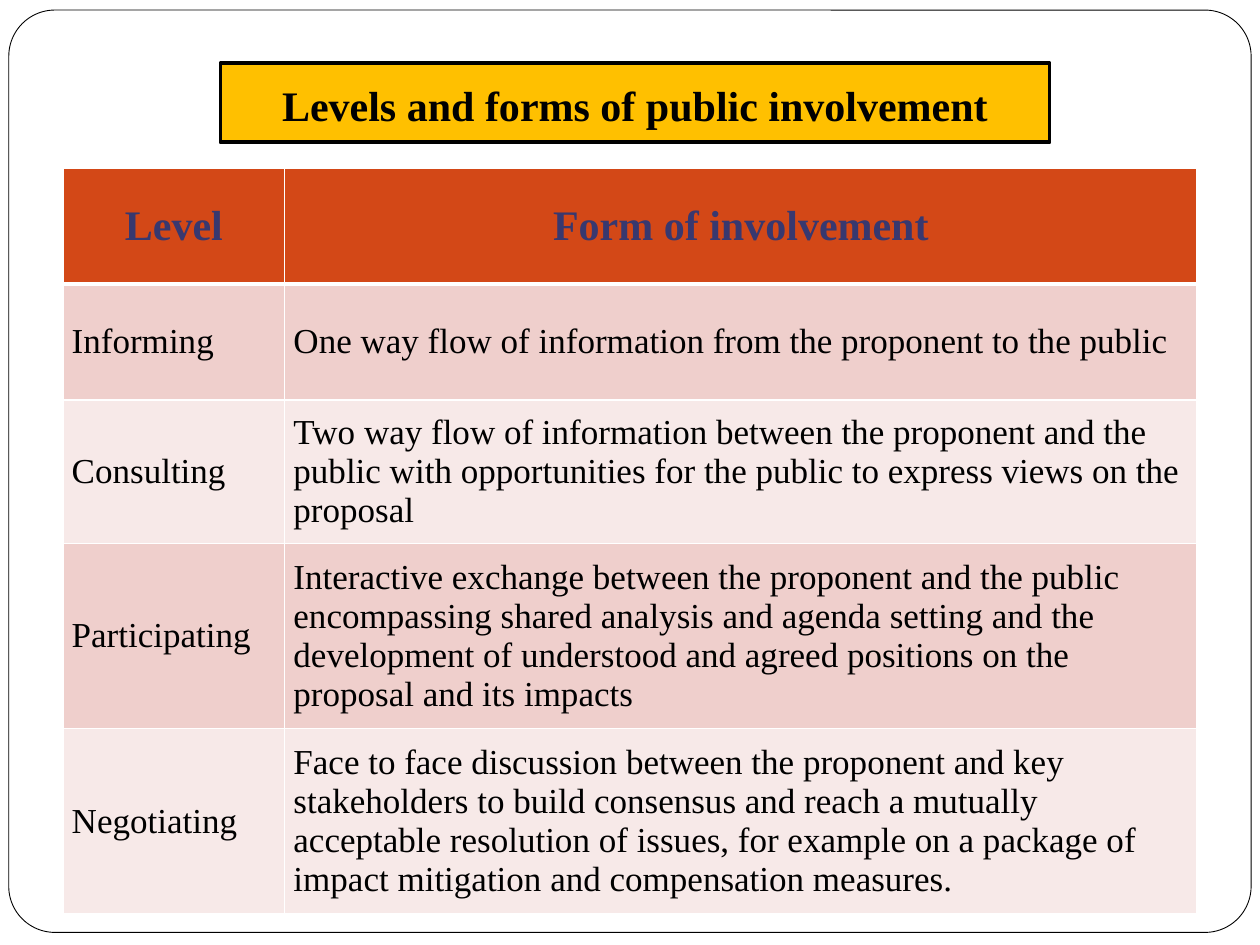
from lxml import etree
from pptx import Presentation
from pptx.dml.color import RGBColor
from pptx.enum import shapes, text
from pptx.oxml import ns
from pptx.util import Pt

FONT = "Times New Roman"
BLACK, WHITE = "000000", "FFFFFF"
HEADER_FILL, HEADER_TEXT = "D34817", "38386F"
BAND_FILLS = ("EFCFCC", "F7E9E8")

COLUMN_WIDTHS = (126.72, 521.28)
ROW_HEIGHTS = (66.24, 66.24, 82.08, 105.84, 105.84)
LEVELS = (
    ("Level", "Form of involvement"),
    ("Informing", "One way flow of information from the proponent to the public"),
    ("Consulting", "Two way flow of information between the proponent and the public "
                   "with opportunities for the public to express views on the proposal"),
    ("Participating", "Interactive exchange between the proponent and the public "
                      "encompassing shared analysis and agenda setting and the development "
                      "of understood and agreed positions on the proposal and its impacts"),
    ("Negotiating", "Face to face discussion between the proponent and key stakeholders "
                    "to build consensus and reach a mutually acceptable resolution of issues, "
                    "for example on a package of impact mitigation and compensation measures."),
)


def paint(fill, color):
    fill.solid()
    fill.fore_color.rgb = RGBColor.from_string(color)


def outline(shape, fill, width):
    paint(shape.fill, fill)
    paint(shape.line.fill, BLACK)
    shape.line.width = Pt(width)


def place(shape, left, top, width, height):
    shape.left, shape.top = Pt(left), Pt(top)
    shape.width, shape.height = Pt(width), Pt(height)


def write(frame, words, size, color, bold, align):
    paragraph = frame.paragraphs[0]
    paragraph.alignment = align
    run = paragraph.add_run()
    run.text = words
    run.font.name, run.font.size, run.font.bold = FONT, Pt(size), bold
    run.font.color.rgb = RGBColor.from_string(color)


def add_title(slide, words):
    title = slide.shapes.title
    place(title, 126, 36, 473.76, 45.36)
    outline(title, "FFC000", 2.25)
    frame = title.text_frame
    frame.word_wrap = True
    frame.auto_size = text.MSO_AUTO_SIZE.NONE
    frame.vertical_anchor = text.MSO_ANCHOR.BOTTOM
    frame.margin_left = frame.margin_right = frame.margin_bottom = Pt(7.2)
    frame.margin_top = Pt(3.6)
    write(frame, words, 24, BLACK, True, text.PP_ALIGN.CENTER)
    return title


def add_page_frame(slide, title):
    page_frame = slide.shapes.add_shape(
        shapes.MSO_SHAPE.ROUNDED_RECTANGLE, Pt(5.04), Pt(5.76), Pt(709.92), Pt(527.04))
    page_frame.adjustments[0] = 0.05
    page_frame.shadow.inherit = False
    outline(page_frame, WHITE, 0.5)
    # The frame lies behind the title
    title.element.addprevious(page_frame.element)


def add_borders(cell, bottom, top):
    properties = cell._tc.get_or_add_tcPr()
    for side, width in (("L", 1), ("R", 1), ("T", top), ("B", bottom)):
        line = etree.SubElement(properties, ns.qn(f"a:ln{side}"), w=str(Pt(width)))
        solid = etree.SubElement(line, ns.qn("a:solidFill"))
        etree.SubElement(solid, ns.qn("a:srgbClr"), val=WHITE)


def format_cell(cell, words, row):
    header = row == 0
    add_borders(cell, bottom=3 if header else 1, top=3 if row == 1 else 1)
    paint(cell.fill, HEADER_FILL if header else BAND_FILLS[(row - 1) % 2])
    cell.vertical_anchor = text.MSO_ANCHOR.MIDDLE
    cell.margin_left = cell.margin_right = Pt(5)
    cell.margin_top = cell.margin_bottom = Pt(5)
    if header:
        write(cell.text_frame, words, 24, HEADER_TEXT, True, text.PP_ALIGN.CENTER)
    else:
        write(cell.text_frame, words, 20, BLACK, False, text.PP_ALIGN.LEFT)


def add_levels_table(slide):
    table = slide.shapes.add_table(
        len(LEVELS), len(COLUMN_WIDTHS), Pt(36), Pt(96),
        Pt(sum(COLUMN_WIDTHS)), Pt(sum(ROW_HEIGHTS))).table
    for column, width in zip(table.columns, COLUMN_WIDTHS):
        column.width = Pt(width)
    for row, (height, level) in enumerate(zip(ROW_HEIGHTS, LEVELS)):
        table.rows[row].height = Pt(height)
        for column, words in enumerate(level):
            format_cell(table.cell(row, column), words, row)


def main():
    deck = Presentation()
    deck.slide_width, deck.slide_height = Pt(720), Pt(540)
    slide = deck.slides.add_slide(deck.slide_layouts[5])
    paint(slide.background.fill, WHITE)

    # Heading and the rounded page frame
    title = add_title(slide, "Levels and forms of public involvement")
    add_page_frame(slide, title)

    # Levels of involvement
    add_levels_table(slide)
    deck.save("out.pptx")


if __name__ == "__main__":
    main()
